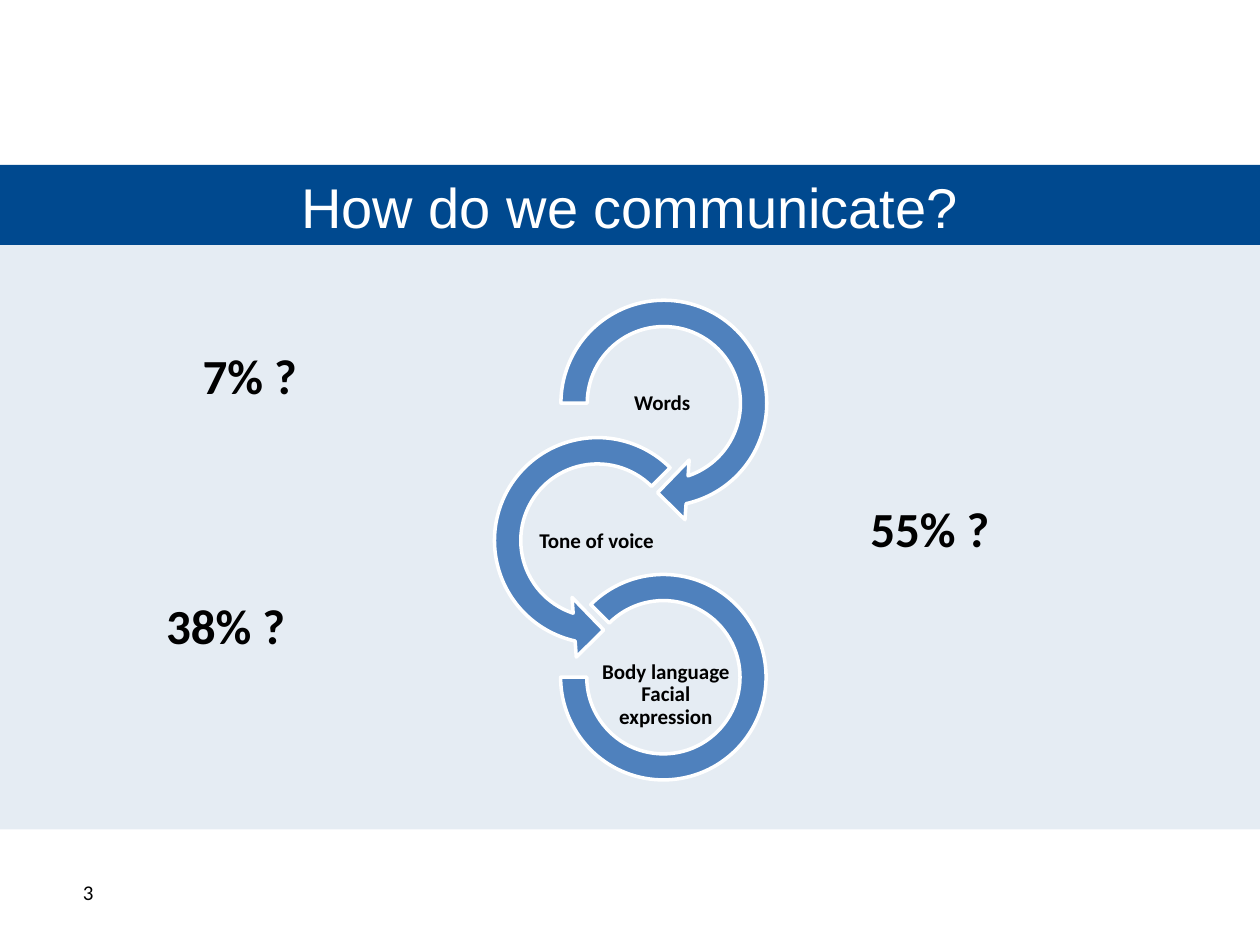
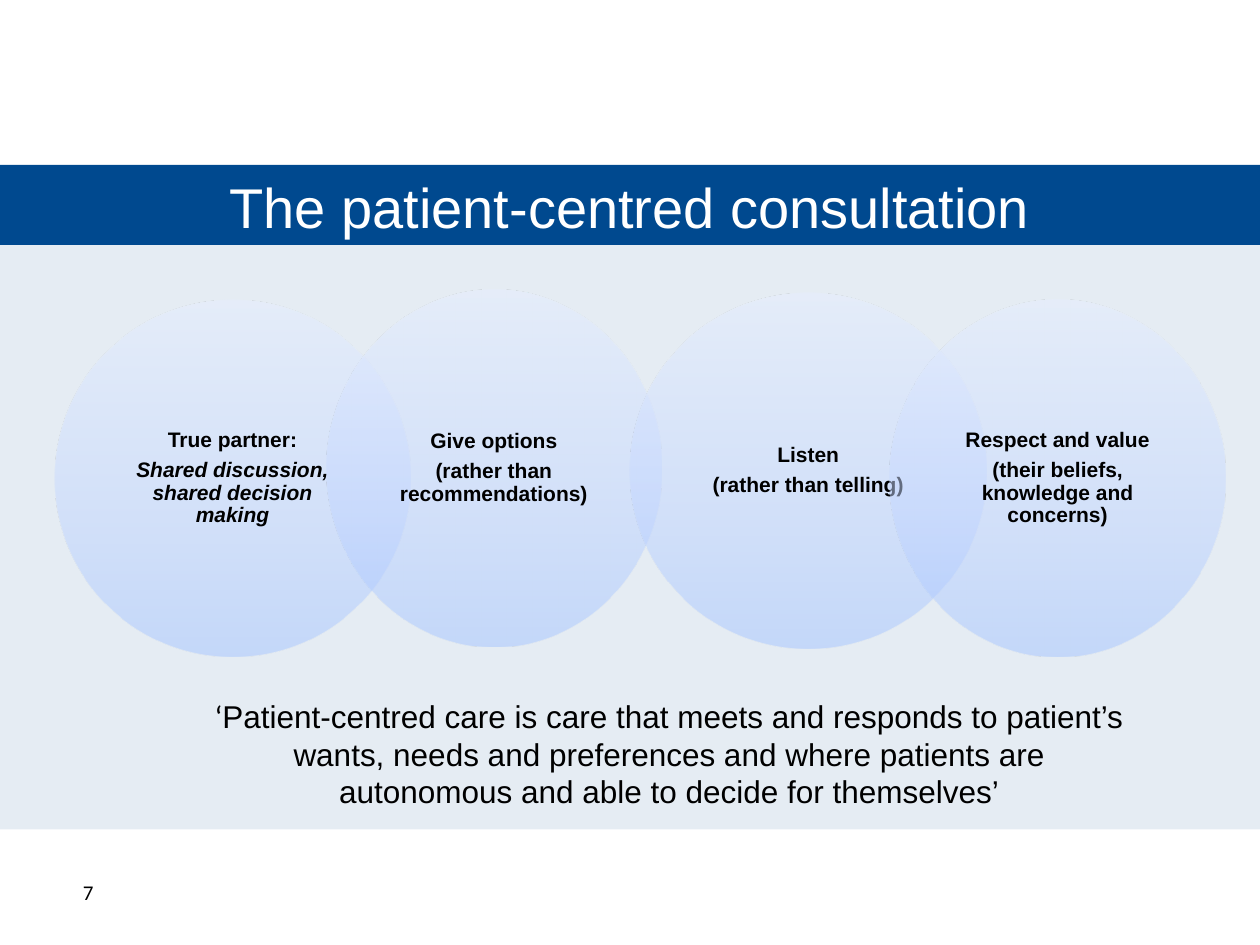
"""Build two slides on communication and the patient-centred consultation."""
from lxml import etree
from pptx import Presentation
from pptx.dml.color import RGBColor
from pptx.enum.shapes import MSO_SHAPE
from pptx.enum.text import MSO_ANCHOR, PP_ALIGN
from pptx.oxml.ns import qn
from pptx.util import Pt

RECTANGLE, ELLIPSE = MSO_SHAPE.RECTANGLE, MSO_SHAPE.OVAL
ARROW, LEFT_ARROW, ARC = MSO_SHAPE.CIRCULAR_ARROW, MSO_SHAPE.LEFT_CIRCULAR_ARROW, MSO_SHAPE.BLOCK_ARC
LEFT, CENTER = PP_ALIGN.LEFT, PP_ALIGN.CENTER
TOP, MIDDLE = MSO_ANCHOR.TOP, MSO_ANCHOR.MIDDLE
NAVY, BLUE, WHITE, BLACK = "00498F", "4F81BD", "FFFFFF", "000000"
CIRCLE_STOPS = [(0, "A4C4FF"), (35, "BFD4FF"), (100, "E6EEFF")]
color = RGBColor.from_string


def add_shape(slide, kind, box, fill, line=None):
    """Add a flat preset shape, outlined only when a line colour is given."""
    shape = slide.shapes.add_shape(kind, *map(Pt, box))
    shape.shadow.inherit = False
    shape.fill.solid()
    shape.fill.fore_color.rgb = color(fill)
    if line:
        shape.line.color.rgb = color(line)
        shape.line.width = Pt(2)
    else:
        shape.line.fill.background()
    return shape


def write(shape, text, size, font, bold=False, align=CENTER, anchor=MIDDLE,
          ink=BLACK, insets=None, label=False):
    """Put formatted text in a shape; labels get tight lines and a gap after."""
    frame = shape.text_frame
    frame.text = text
    frame.word_wrap = True
    frame.vertical_anchor = anchor
    if insets:
        frame.margin_left = frame.margin_right = Pt(insets[0])
        frame.margin_top = frame.margin_bottom = Pt(insets[1])
    for paragraph in frame.paragraphs:
        paragraph.alignment = align
        if label:
            paragraph.line_spacing = 0.9
            paragraph.space_after = Pt(4.2)
        for run in paragraph.runs:
            run.font.name, run.font.size, run.font.bold = font, Pt(size), bold
            run.font.color.rgb = color(ink)


presentation = Presentation()
presentation.slide_width, presentation.slide_height = Pt(720), Pt(540)
layout = presentation.slide_layouts[5]

slides = []
for title_text, number in [("How do we communicate?", "3"),
                           ("The patient-centred consultation", "7")]:
    slide = presentation.slides.add_slide(layout)
    title = slide.shapes.title
    title.left, title.top, title.width, title.height = Pt(0), Pt(95), Pt(720), Pt(45.4)
    write(title, title_text, 32, "Arial", ink=WHITE)
    number_box = slide.shapes.add_textbox(Pt(19.4), Pt(495.4), Pt(62), Pt(28.8))
    write(number_box, number, 12, "Calibri")
    slides.append(slide)
communicate, consultation = slides

title_band = add_shape(communicate, RECTANGLE, (0, 94.3, 720, 45.7), NAVY)
body_band = add_shape(communicate, RECTANGLE, (0, 140, 720, 334), NAVY)
band_color = body_band.element.spPr.find(qn("a:solidFill"))[0]
etree.SubElement(band_color, qn("a:alpha"), val="10000")
for band in (body_band, title_band):
    layout.shapes.element.insert(2, band.element)

channels = [
    (ARROW, (311, 162, 136.8, 136.8), (0.11, 11.42, 45, 108, 0.125),
     "Words", (340.6, 211.7)),
    (LEFT_ARROW, (273, 240.5, 136.8, 136.8), (0.11, 11.42, 63, 189, 0.125),
     "Tone of voice", (303.1, 290.2)),
    (ARC, (320.4, 328.3, 117.4, 117.4), (135, 108, 0.127),
     "Body language Facial expression", (342.7, 378)),
]
for kind, box, adjustments, text, (left, top) in channels:
    ring = add_shape(communicate, kind, box, BLUE, WHITE)
    for index, value in enumerate(adjustments):
        ring.adjustments[index] = value
    label_box = communicate.shapes.add_textbox(Pt(left), Pt(top), Pt(75.6), Pt(38.2))
    write(label_box, text, 12, "Calibri", bold=True, insets=(0.7, 0.7), label=True)

for text, left, top, width in [("7% ?", 108.7, 193.7, 91.4),
                               ("38% ?", 87.8, 337, 101.5),
                               ("55% ?", 490.3, 281.5, 108)]:
    share_box = communicate.shapes.add_textbox(Pt(left), Pt(top), Pt(width), Pt(41))
    write(share_box, text, 28, "Calibri", bold=True, align=LEFT, anchor=TOP)

principles = [
    ("True partner:\nShared discussion, shared decision making", 31, 171.4, 203.8),
    ("Give options\n(rather than recommendations)", 186.5, 165.6, 191.5),
    ("Listen\n(rather than telling)", 360, 167, 203.8),
    ("Respect and value\n(their beliefs, knowledge and concerns)", 508.3, 171.4, 192.2),
]
for text, left, top, width in principles:
    circle = add_shape(consultation, ELLIPSE, (left, top, width, 203.8), WHITE)
    circle.fill.gradient()
    circle.fill.gradient_angle = 90
    stop_list = circle.element.spPr.find(qn("a:gradFill")).find(qn("a:gsLst"))
    stop_list.clear()
    for position, stop_color in CIRCLE_STOPS:
        stop = etree.SubElement(stop_list, qn("a:gs"), pos=str(position * 1000))
        stop_fill = etree.SubElement(stop, qn("a:srgbClr"), val=stop_color)
        etree.SubElement(stop_fill, qn("a:alpha"), val="50000")
    write(circle, text, 12, "Arial", bold=True, insets=(11.5, 1.4), label=True)
    if text.startswith("True partner"):
        circle.text_frame.paragraphs[1].runs[0].font.italic = True

quote_box = consultation.shapes.add_textbox(Pt(110.2), Pt(394.6), Pt(544.3), Pt(72.7))
write(quote_box, "‘", 18, "Calibri", anchor=TOP)
quote = quote_box.text_frame.paragraphs[0].add_run()
quote.text = ("Patient-centred care is care that meets and responds to patient’s wants, "
              "needs and preferences and where patients are autonomous and able to "
              "decide for themselves’")
quote.font.name, quote.font.size = "Arial", Pt(18)
quote.font.color.rgb = color(BLACK)

presentation.save("out.pptx")
